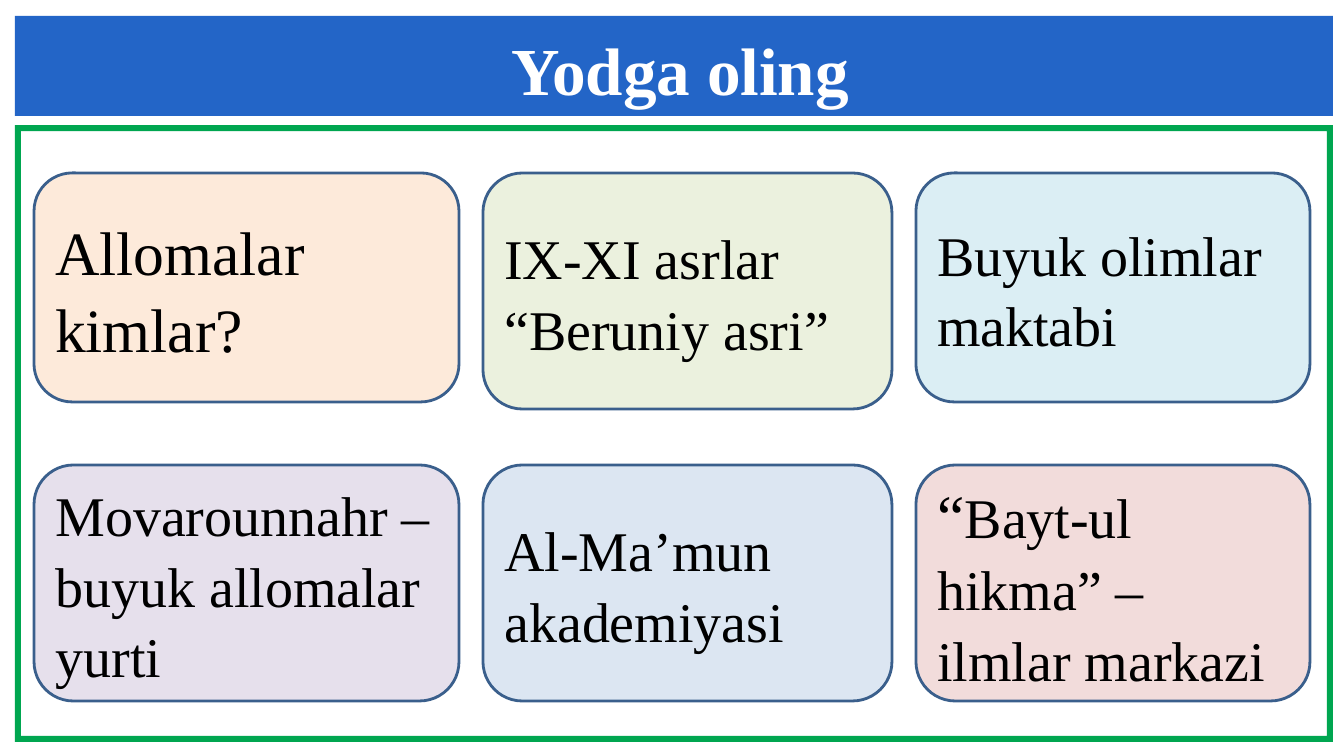
from pptx import Presentation
from pptx.dml.color import RGBColor
from pptx.enum.shapes import MSO_SHAPE
from pptx.enum.text import MSO_ANCHOR, MSO_AUTO_SIZE, PP_ALIGN
from pptx.util import Pt

FONT = "Times New Roman"
WHITE = RGBColor(0xFF, 0xFF, 0xFF)
BLACK = RGBColor(0x00, 0x00, 0x00)
BLUE = RGBColor(0x23, 0x65, 0xC7)
GREEN = RGBColor(0x00, 0xA6, 0x50)
OUTLINE = RGBColor(0x3A, 0x5F, 0x8C)
PEACH = RGBColor(0xFD, 0xEA, 0xDA)
OLIVE = RGBColor(0xEB, 0xF1, 0xDE)
AQUA = RGBColor(0xDB, 0xEE, 0xF4)
LILAC = RGBColor(0xE6, 0xE0, 0xEC)
SKY = RGBColor(0xDC, 0xE6, 0xF2)
ROSE = RGBColor(0xF2, 0xDC, 0xDB)

HEADING = "Yodga oling"
TOPICS = [
    [
        (PEACH, 229, [[("Allomalar kimlar?", 44)]]),
        (OLIVE, 236, [[("IX-XI asrlar “Beruniy asri”", 40)]]),
        (AQUA, 229, [[("Buyuk olimlar maktabi", 40)]]),
    ],
    [
        (LILAC, 236, [[("Movarounnahr – buyuk allomalar yurti", 40)]]),
        (SKY, 236, [[("Al-Ma’mun akademiyasi", 40)]]),
        (ROSE, 236, [[("“", 44), ("Bayt-ul hikma” –", 40)],
                     [("ilmlar markazi", 40)]]),
    ],
]
COLUMNS = [(34, 425), (483, 409), (916, 394)]
ROW_TOPS = [173, 465]
BAND = (15, 16, 1318, 100)
FRAME = (15, 125, 1318, 617)
FRAME_THICKNESS = 6
HEADING_BOX = (499, 23, 362, 92)
EMU_PER_PX = 914400 / 100.8


def emu(*lengths):
    return [round(length * EMU_PER_PX) for length in lengths]


def add_panel(slide, preset, box, color):
    panel = slide.shapes.add_shape(preset, *emu(*box))
    panel.shadow.inherit = False
    panel.fill.solid()
    panel.fill.fore_color.rgb = color
    panel.line.fill.background()
    return panel


def add_run(paragraph, words, size, color, bold=False):
    run = paragraph.add_run()
    run.text = words
    run.font.name = FONT
    run.font.size = Pt(size)
    run.font.bold = bold
    run.font.color.rgb = color


def add_topic(slide, box, color, paragraphs):
    card = add_panel(slide, MSO_SHAPE.ROUNDED_RECTANGLE, box, color)
    card.line.color.rgb = OUTLINE
    card.line.width = Pt(2)
    frame = card.text_frame
    frame.word_wrap = True
    frame.vertical_anchor = MSO_ANCHOR.MIDDLE
    for index, runs in enumerate(paragraphs):
        paragraph = frame.add_paragraph() if index else frame.paragraphs[0]
        paragraph.alignment = PP_ALIGN.LEFT
        paragraph.line_spacing = 1.05
        for words, size in runs:
            add_run(paragraph, words, size, BLACK)


def add_heading(slide):
    heading = slide.shapes.title
    heading.left, heading.top, heading.width, heading.height = emu(*HEADING_BOX)
    frame = heading.text_frame
    frame.word_wrap = False
    frame.auto_size = MSO_AUTO_SIZE.NONE
    frame.vertical_anchor = MSO_ANCHOR.TOP
    frame.paragraphs[0].alignment = PP_ALIGN.CENTER
    add_run(frame.paragraphs[0], HEADING, 48, WHITE, True)
    slide.shapes.element.append(heading.element)


def main():
    presentation = Presentation()
    presentation.slide_width, presentation.slide_height = emu(1344, 756)
    slide = presentation.slides.add_slide(presentation.slide_layouts[5])
    border = add_panel(slide, MSO_SHAPE.FRAME, FRAME, GREEN)
    border.adjustments[0] = FRAME_THICKNESS / FRAME[3]
    add_panel(slide, MSO_SHAPE.RECTANGLE, BAND, BLUE)
    for top, topics in zip(ROW_TOPS, TOPICS):
        for (left, width), (color, height, paragraphs) in zip(COLUMNS, topics):
            add_topic(slide, (left, top, width, height), color, paragraphs)
    add_heading(slide)
    presentation.save("out.pptx")


if __name__ == "__main__":
    main()
